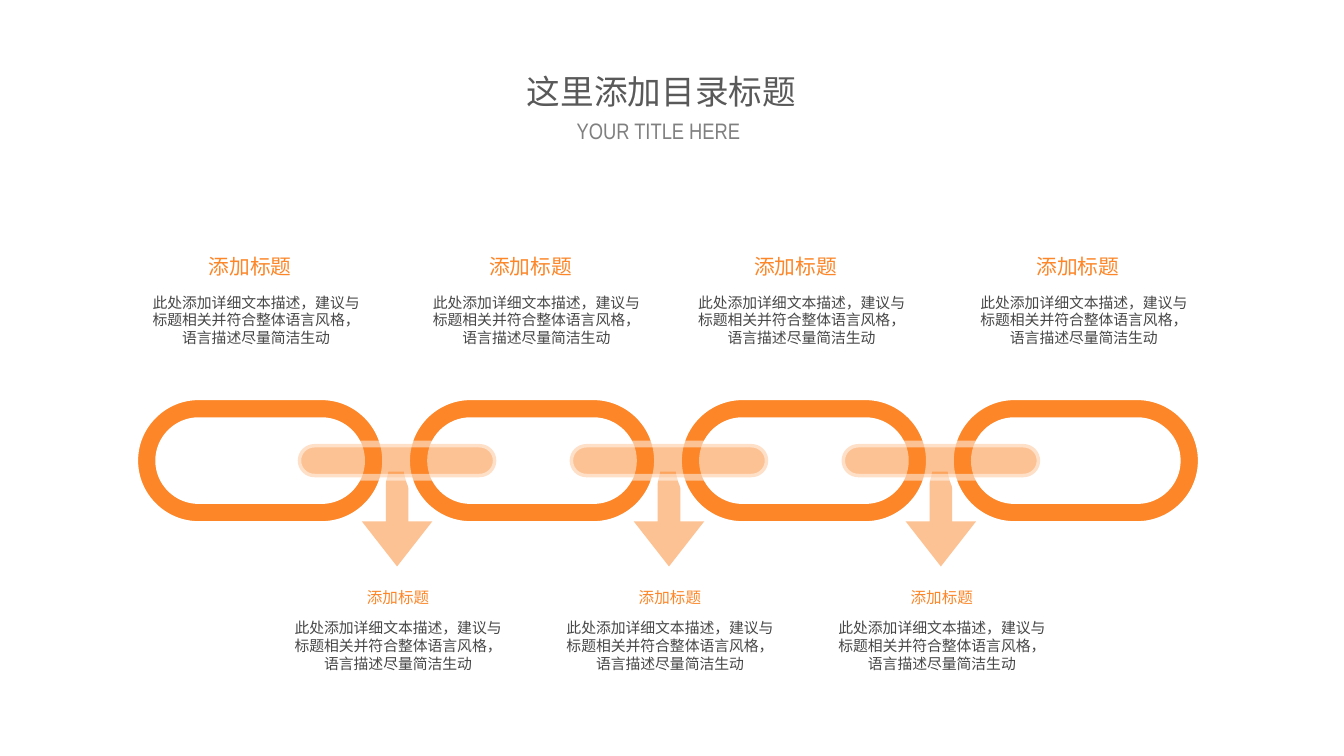
import lxml.etree
import pptx
import pptx.dml.color
import pptx.enum.shapes
import pptx.enum.text
import pptx.oxml.ns
import pptx.util

ANCHORS = pptx.enum.text.MSO_ANCHOR
inch = pptx.util.Inches
qn = pptx.oxml.ns.qn

TITLE = "这里添加目录标题"
SUBTITLE = "YOUR TITLE HERE"
DETAIL = "此处添加详细文本描述，建议与标题相关并符合整体语言风格，语言描述尽量简洁生动"
LINK_NOTES = [
    (2.48, "添加标题", DETAIL),
    (5.26, "添加标题", DETAIL),
    (7.89, "添加标题", DETAIL),
    (10.69, "添加标题", DETAIL),
]
JOINT_NOTES = [("添加标题", DETAIL)] * 3

ORANGE, WHITE, INK = "FC8628", "FFFFFF", "474747"
CJK = "Noto Sans CJK JP"
FIRST_LINK, LAST_LINK = 2.58, 10.67
PITCH = (LAST_LINK - FIRST_LINK) / (len(LINK_NOTES) - 1)
CHAIN_Y = 4.57
LINK_W, LINK_H, BAND = 2.49, 1.27, 0.24
BAR_W, BAR_H = 1.97, 0.33
ARROW_LENGTH, ARROW_BREADTH, ARROW_Y = 0.94, 0.7, 5.15
OUTLINE = 5
ARC_PULL = 0.55


def color(value):
    return pptx.dml.color.RGBColor.from_string(value)


def fade(fill, percent):
    tint = fill._xPr.find(".//" + qn("a:srgbClr"))
    lxml.etree.SubElement(tint, qn("a:alpha"), val=str(percent * 1000))


def paint(part, outline=None, opacity=100):
    part.shadow.inherit = False
    part.fill.solid()
    part.fill.fore_color.rgb = color(ORANGE)
    fills = [part.fill]
    if outline:
        part.line.width = pptx.util.Pt(outline)
        part.line.color.rgb = color(WHITE)
        fills.append(part.line.fill)
    else:
        part.line.fill.background()
    if opacity < 100:
        for fill in fills:
            fade(fill, opacity)


def write(slide, text, center, top, width, height, size, ink, font=CJK, holder=None,
          inset=(0, 0), anchor=ANCHORS.TOP, grow=True, spacing=None, before=None):
    frame_at = [inch(v) for v in (center - width / 2, top, width, height)]
    holder = holder or slide.shapes.add_textbox(*frame_at)
    holder.left, holder.top, holder.width, holder.height = frame_at
    frame = holder.text_frame
    frame.word_wrap = True
    sizing = pptx.enum.text.MSO_AUTO_SIZE
    frame.auto_size = sizing.SHAPE_TO_FIT_TEXT if grow else sizing.NONE
    frame.vertical_anchor = anchor
    frame.margin_left = frame.margin_right = inch(inset[0])
    frame.margin_top = frame.margin_bottom = inch(inset[1])
    paragraph = frame.paragraphs[0]
    paragraph.alignment = pptx.enum.text.PP_ALIGN.CENTER
    if spacing:
        paragraph.line_spacing = spacing
    if before:
        paragraph.space_before = pptx.util.Pt(before)
    run = paragraph.add_run()
    run.text = text
    run.font.size = pptx.util.Pt(size)
    run.font.name = font
    run.font.color.rgb = color(ink)
    latin = run.font._element.find(qn("a:latin"))
    latin.addnext(lxml.etree.Element(qn("a:ea"), typeface=font))


def contour(center, width, height):
    reach, radius = width / 2, height / 2
    flat = reach - radius
    corners = [(-flat, -radius), (flat, -radius), (reach, 0), (flat, radius),
               (-flat, radius), (-reach, 0), (-flat, -radius)]
    return [(inch(center + x), inch(CHAIN_Y + y)) for x, y in corners]


def round_ends(capsule):
    outline = next(capsule._element.iter(qn("a:path")))
    middle = int(outline.get("h")) / 2
    start = None
    for step in outline:
        point = step.find(qn("a:pt"))
        if point is None:
            continue
        end = int(point.get("x")), int(point.get("y"))
        if step.tag == qn("a:lnTo") and start[0] != end[0] and start[1] != end[1]:
            tip, shoulder = sorted((start, end), key=lambda spot: abs(spot[1] - middle))
            corner = tip[0], shoulder[1]
            step.tag_name = None
            curve = lxml.etree.Element(qn("a:cubicBezTo"))
            pulled = [[round(a + ARC_PULL * (c - a)) for a, c in zip(spot, corner)]
                      for spot in (start, end)]
            for x, y in pulled + [end]:
                lxml.etree.SubElement(curve, qn("a:pt"), x=str(x), y=str(y))
            outline.replace(step, curve)
        start = end


def add_capsule(slide, contours, opacity=100):
    first, *others = contours
    builder = slide.shapes.build_freeform(*first[0])
    builder.add_line_segments(first[1:], close=True)
    for other in others:
        builder.move_to(*other[0])
        builder.add_line_segments(other[1:], close=True)
    capsule = builder.convert_to_shape()
    round_ends(capsule)
    paint(capsule, outline=OUTLINE, opacity=opacity)


def main():
    deck = pptx.Presentation()
    deck.slide_width, deck.slide_height = inch(13.33), inch(7.5)
    slide = deck.slides.add_slide(deck.slide_layouts[5])
    links = [FIRST_LINK + PITCH * i for i in range(len(LINK_NOTES))]
    joints = [link + PITCH / 2 + 0.01 for link in links[:-1]]

    for joint in joints:
        arrow = slide.shapes.add_shape(
            pptx.enum.shapes.MSO_SHAPE.RIGHT_ARROW,
            inch(joint - ARROW_LENGTH / 2), inch(ARROW_Y - ARROW_BREADTH / 2),
            inch(ARROW_LENGTH), inch(ARROW_BREADTH))
        arrow.rotation = 90
        arrow.adjustments[0], arrow.adjustments[1] = 0.32, 0.64
        paint(arrow, opacity=50)
    for link in links:
        hole = contour(link, LINK_W - 2 * BAND, LINK_H - 2 * BAND)
        add_capsule(slide, [contour(link, LINK_W, LINK_H), hole[::-1]])
    for joint in joints:
        add_capsule(slide, [contour(joint, BAR_W, BAR_H)], opacity=50)

    for center, heading, detail in LINK_NOTES:
        write(slide, detail, center + 0.06, 2.91, 2.14, 0.53, 10.6, INK)
        write(slide, heading, center, 2.49, 2.28, 0.34, 14.8, ORANGE, inset=(0, 0.05),
              anchor=ANCHORS.MIDDLE, grow=False, spacing=0.9, before=10.6)
    for joint, (heading, detail) in zip(joints, JOINT_NOTES):
        write(slide, heading, joint + 0.01, 5.83, 1.71, 0.19, 11.1, ORANGE)
        write(slide, detail, joint + 0.01, 6.14, 2.14, 0.53, 10.6, INK)

    write(slide, TITLE, 6.56, 0.63, 2.99, 0.54, 24, "595959", font="Roboto",
          holder=slide.shapes.title, inset=(0.13, 0.07))
    write(slide, SUBTITLE, 6.53, 1.09, 1.92, 0.4, 16, "808080", font="Arial Narrow",
          inset=(0.13, 0.07))
    deck.save("out.pptx")


if __name__ == "__main__":
    main()
